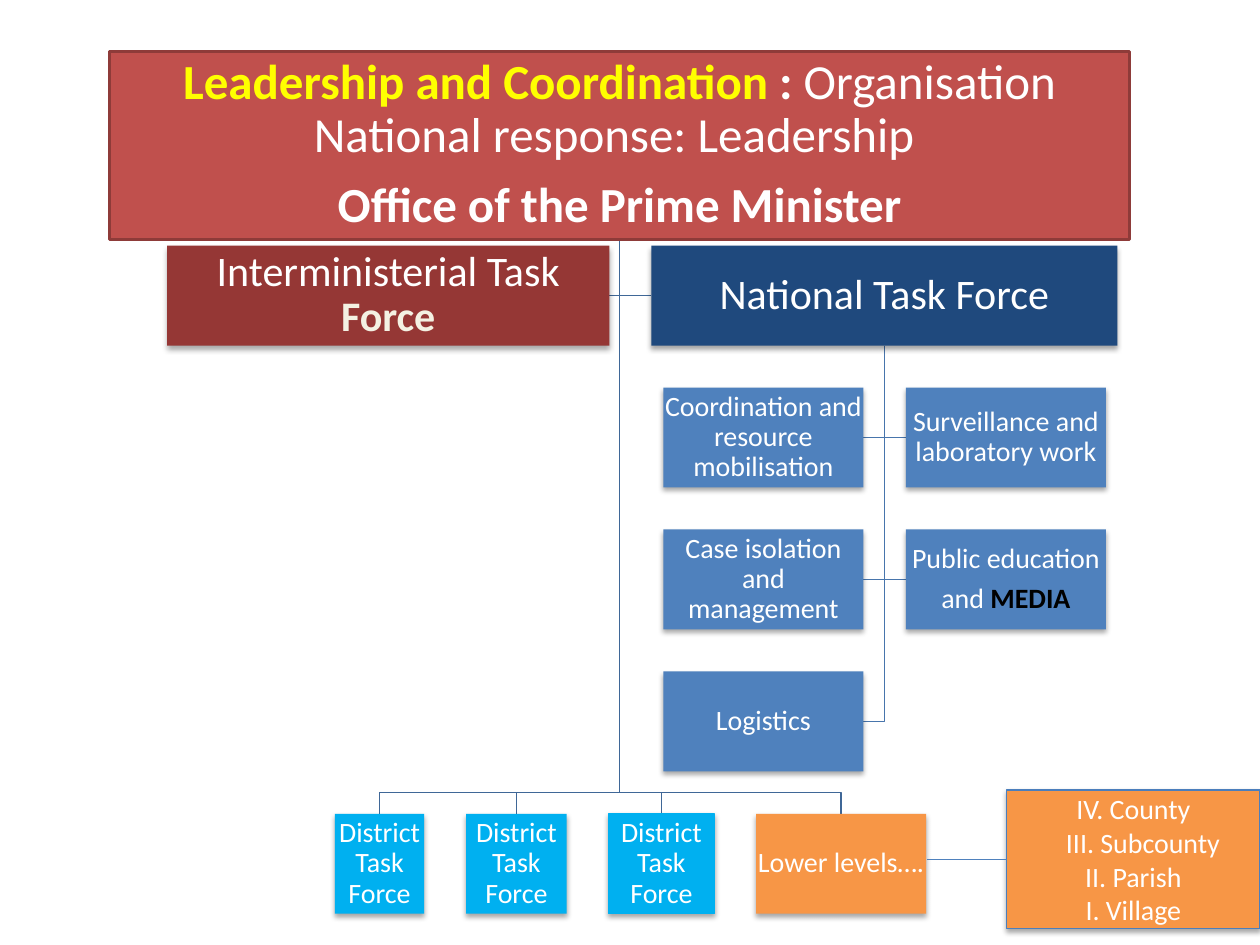
from dataclasses import dataclass

from lxml import etree
from pptx import Presentation
from pptx.dml.color import RGBColor
from pptx.enum.shapes import MSO_CONNECTOR, MSO_SHAPE
from pptx.enum.text import MSO_ANCHOR, PP_ALIGN
from pptx.oxml import parse_xml
from pptx.oxml.ns import qn
from pptx.util import Pt

RECT = MSO_SHAPE.RECTANGLE
STRAIGHT = MSO_CONNECTOR.STRAIGHT
CENTER = PP_ALIGN.CENTER
MIDDLE = MSO_ANCHOR.MIDDLE


@dataclass(frozen=True)
class Theme:
    font: str = "Calibri"
    white: str = "FFFFFF"
    black: str = "000000"
    yellow: str = "FFFF00"
    cream: str = "F4F1E3"
    red: str = "C0504D"
    red_edge: str = "8E3B39"
    dark_red: str = "953735"
    navy: str = "1F497D"
    blue: str = "4F81BD"
    blue_edge: str = "4B7EBC"
    cyan: str = "00B0F0"
    orange: str = "F79646"
    main_link: str = "3F6797"
    team_link: str = "4875AC"
    title_size: int = 28
    force_size: int = 24
    team_size: int = 16


THEME = Theme()
SHADOW = (
    '<a:effectLst xmlns:a="http://schemas.openxmlformats.org/drawingml/2006/main">'
    '<a:outerShdw blurRad="39400" dist="22900" dir="5400000" rotWithShape="0">'
    '<a:srgbClr val="000000"><a:alpha val="35000"/></a:srgbClr>'
    "</a:outerShdw></a:effectLst>"
)

prs = Presentation()
prs.slide_width, prs.slide_height = Pt(720), Pt(540)
slide = prs.slides.add_slide(prs.slide_layouts[6])
shapes = slide.shapes


def add_box(frame, fill, paragraphs, size, edge=None, edge_width=0.75,
            shadow=True, inset=1, tight=True):
    """Draw a box; each paragraph is a list of (text, colour, bold) runs."""
    box = shapes.add_shape(RECT, *map(Pt, frame))
    box.fill.solid()
    box.fill.fore_color.rgb = RGBColor.from_string(fill)
    if edge:
        box.line.color.rgb = RGBColor.from_string(edge)
        box.line.width = Pt(edge_width)
    else:
        box.line.fill.background()
    box.shadow.inherit = False
    if shadow:
        props = box._element.spPr
        props.replace(props.find(qn("a:effectLst")), parse_xml(SHADOW))
    text = box.text_frame
    text.word_wrap = True
    text.vertical_anchor = MIDDLE
    text.margin_left = text.margin_right = Pt(inset)
    text.margin_top = text.margin_bottom = Pt(min(inset, 3.6))
    for i, runs in enumerate(paragraphs):
        para = text.add_paragraph() if i else text.paragraphs[0]
        para.alignment = CENTER
        if tight:
            para.line_spacing = 0.9
            para.space_after = Pt(0.35 * size)
        for words, color, bold in runs:
            run = para.add_run()
            run.text = words
            run.font.name = THEME.font
            run.font.size = Pt(size)
            run.font.bold = bold
            run.font.color.rgb = RGBColor.from_string(color)
    return box


def add_link(points, color):
    start, *rest = [(Pt(x), Pt(y)) for x, y in points]
    builder = shapes.build_freeform(*start)
    builder.add_line_segments(rest, close=False)
    link = builder.convert_to_shape()
    link.fill.background()
    link.line.color.rgb = RGBColor.from_string(color)
    link.line.width = Pt(0.75)
    link.shadow.inherit = False


def plain(words):
    return [(words, THEME.white, False)]


# Grid: the task forces and three rows of teams share one vertical step
BOX_H = 57.1
STEP = 81.1
FORCE_TOP = 140.4
TEAM_W = 114.3
TEAM_LEFTS = (379.1, 517.7)
TEAM_SPINE = 505.4
OFFICE_SPINE = 354.2
OFFICE_BOTTOM = 136.8
BUS_Y = 453
LOWER_TOP = 465.1

teams = [
    [plain("Coordination and resource mobilisation")],
    [plain("Surveillance and laboratory work")],
    [plain("Case isolation and management")],
    [plain("Public education"),
     [("and ", THEME.white, False), ("MEDIA", THEME.black, True)]],
    [plain("Logistics")],
]
# left, width, fill, edge, label
lower_tier = [
    (191.4, 51, THEME.cyan, None, "District Task Force"),
    (266.4, 57.4, THEME.cyan, None, "District Task Force"),
    (347.6, 60.7, THEME.cyan, THEME.cyan, "District Task Force"),
    (432, 97.2, THEME.orange, None, "Lower levels…."),
]

# Links lie behind the boxes
for i in range(len(teams)):
    row, column = divmod(i, 2)
    y = FORCE_TOP + (row + 1) * STEP + BOX_H / 2
    edge_x = TEAM_LEFTS[1] if column else TEAM_LEFTS[0] + TEAM_W
    add_link([(TEAM_SPINE, FORCE_TOP + BOX_H), (TEAM_SPINE, y), (edge_x, y)],
             THEME.team_link)
for edge_x in (372.2, 348.2):
    y = FORCE_TOP + BOX_H / 2
    add_link([(OFFICE_SPINE, OFFICE_BOTTOM), (OFFICE_SPINE, y), (edge_x, y)],
             THEME.main_link)
for left, width, *_ in lower_tier:
    x = left + width / 2
    add_link([(OFFICE_SPINE, OFFICE_BOTTOM), (OFFICE_SPINE, BUS_Y),
              (x, BUS_Y), (x, LOWER_TOP)], THEME.main_link)

# Office of the Prime Minister
add_box((62.6, 29.5, 582.8, 107.3), THEME.red,
        [[("Leadership and Coordination ", THEME.yellow, True),
          (": ", THEME.white, True),
          ("Organisation National response: Leadership ", THEME.white, False)],
         [("Office of the Prime Minister", THEME.white, True)]],
        THEME.title_size, THEME.red_edge, 2, shadow=False, inset=1.4)

# Task forces
add_box((95.5, FORCE_TOP, 252.7, BOX_H), THEME.dark_red,
        [[("Interministerial Task ", THEME.white, False),
          ("Force", THEME.cream, True)]], THEME.force_size, inset=1.4)
add_box((372.2, FORCE_TOP, 266.4, BOX_H), THEME.navy,
        [plain("National Task Force")], THEME.force_size, inset=1.4)

# Teams under the national task force
for i, paragraphs in enumerate(teams):
    row, column = divmod(i, 2)
    add_box((TEAM_LEFTS[column], FORCE_TOP + (row + 1) * STEP, TEAM_W, BOX_H),
            THEME.blue, paragraphs, THEME.team_size)

# Districts and lower levels
for left, width, fill, edge, label in lower_tier:
    add_box((left, LOWER_TOP, width, BOX_H), fill, [plain(label)],
            THEME.team_size, edge)
levels = ["IV. County", "III. Subcounty", "II. Parish", "I. Village"]
level_box = add_box((575.3, 451.4, 144.7, 79.2), THEME.orange,
                    [plain(level) for level in levels], THEME.team_size,
                    THEME.blue_edge, inset=7.2, tight=False)
subcounty = level_box.text_frame.paragraphs[1]
subcounty._p.get_or_add_pPr().set("marL", str(Pt(11)))

level_link = shapes.add_connector(STRAIGHT, Pt(530), Pt(491), Pt(575.3), Pt(491))
level_link.line.color.rgb = RGBColor.from_string(THEME.blue)
level_link.line.width = Pt(0.25)
etree.SubElement(level_link._element.spPr, qn("a:effectLst"))

prs.save("out.pptx")
